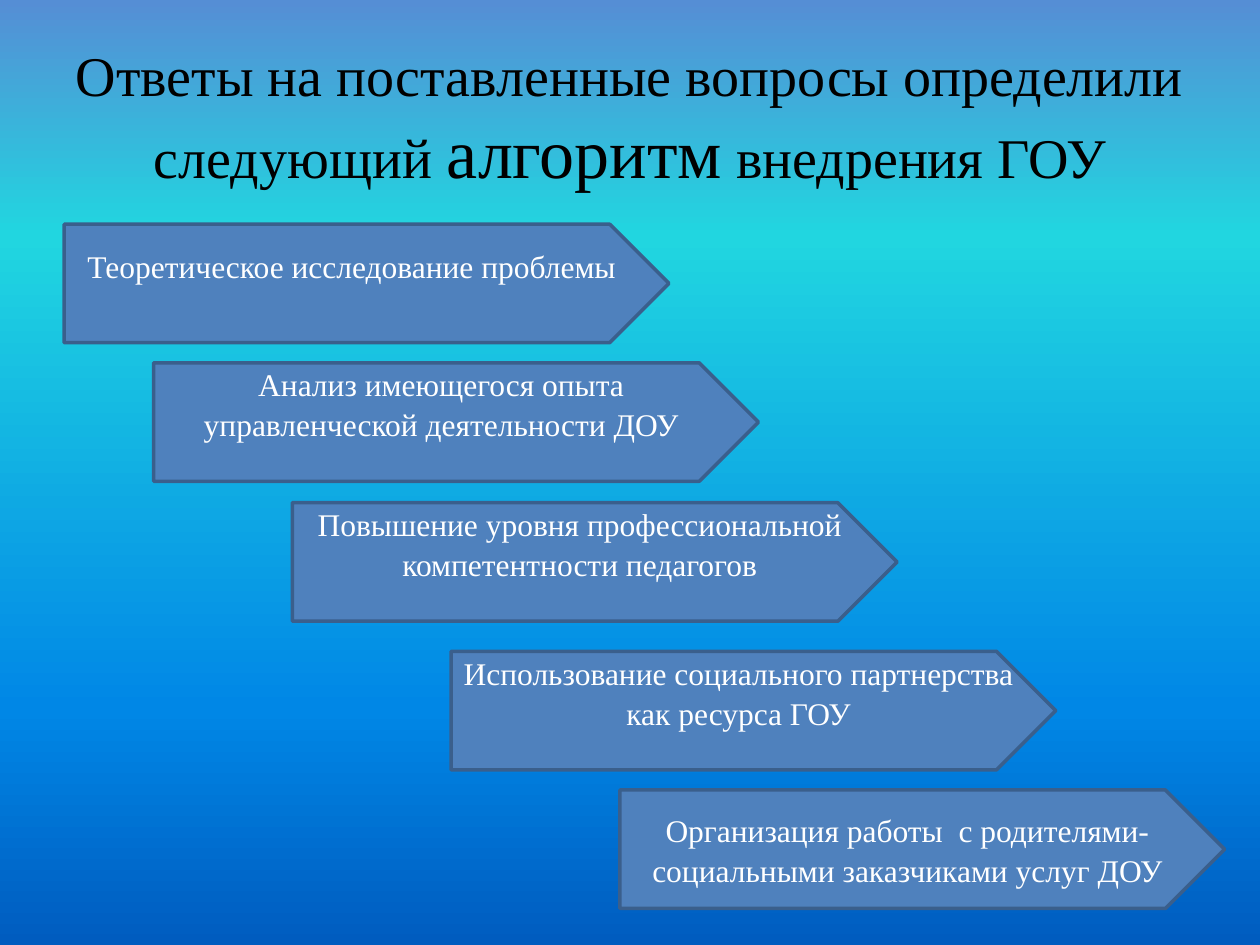
from dataclasses import dataclass

from lxml import etree
from pptx import Presentation
from pptx.dml.color import RGBColor
from pptx.enum.shapes import MSO_SHAPE
from pptx.enum.text import MSO_ANCHOR, MSO_AUTO_SIZE, PP_ALIGN
from pptx.oxml.ns import qn
from pptx.util import Inches, Pt

PENTAGON = MSO_SHAPE.PENTAGON
MIDDLE = MSO_ANCHOR.MIDDLE
CENTER = PP_ALIGN.CENTER
NO_AUTOFIT = MSO_AUTO_SIZE.NONE
TITLE_ONLY = 5


@dataclass(frozen=True)
class Theme:
    font: str = "Times New Roman"
    title_size: int = 32
    emphasis_size: int = 40
    step_size: int = 18
    title_color: str = "000000"
    step_color: str = "FFFFFF"
    step_fill: str = "4F81BD"
    step_line: str = "3A5F8C"
    step_line_width: int = 2
    background: tuple = ((0, "558ED5"), (25, "21D6E0"), (75, "0087E6"), (100, "005CBF"))


STEP_WIDTH, STEP_HEIGHT = 4.8, 0.94
MARGIN = 0.05
RAISED_MARGIN = 0.35  # lifts the text above the middle of its arrow

# left, top, bottom margin, wording
STEPS = (
    (0.51, 1.78, RAISED_MARGIN, "Теоретическое исследование проблемы"),
    (1.22, 2.88, RAISED_MARGIN, "Анализ имеющегося опыта управленческой деятельности ДОУ"),
    (2.32, 3.99, RAISED_MARGIN, "Повышение уровня профессиональной компетентности педагогов"),
    (3.58, 5.17, RAISED_MARGIN, "Использование социального партнерства как ресурса ГОУ"),
    (4.92, 6.27, MARGIN, "Организация работы  с родителями-социальными заказчиками услуг ДОУ"),
)


def add_text(paragraph, text, *, font, size, color):
    run = paragraph.add_run()
    run.text = text
    run.font.name = font
    run.font.size = Pt(size)
    run.font.color.rgb = RGBColor.from_string(color)


class SlideBuilder:
    def __init__(self, slide, theme):
        self.slide = slide
        self.theme = theme

    def background(self):
        fill = self.slide.background.fill
        fill.gradient()
        fill.gradient_angle = 270
        stops = self.slide.element.find(".//" + qn("a:gsLst"))
        for old_stop in list(stops):
            stops.remove(old_stop)
        for percent, color in self.theme.background:
            stop = etree.SubElement(stops, qn("a:gs"), pos=str(percent * 1000))
            etree.SubElement(stop, qn("a:srgbClr"), val=color)

    def title(self, parts):
        """Fill the title from (text, size) pairs."""
        title = self.slide.shapes.title
        title.left, title.top = Inches(0.5), Inches(0.3)
        title.width, title.height = Inches(9), Inches(1.25)
        frame = title.text_frame
        frame.word_wrap = True
        frame.auto_size = NO_AUTOFIT
        frame.vertical_anchor = MIDDLE
        paragraph = frame.paragraphs[0]
        paragraph.alignment = CENTER
        for text, size in parts:
            add_text(paragraph, text, font=self.theme.font, size=size,
                     color=self.theme.title_color)

    def step(self, left, top, bottom_margin, text):
        theme = self.theme
        arrow = self.slide.shapes.add_shape(
            PENTAGON, Inches(left), Inches(top), Inches(STEP_WIDTH), Inches(STEP_HEIGHT))
        arrow.shadow.inherit = False
        arrow.fill.solid()
        arrow.fill.fore_color.rgb = RGBColor.from_string(theme.step_fill)
        arrow.line.color.rgb = RGBColor.from_string(theme.step_line)
        arrow.line.width = Pt(theme.step_line_width)
        frame = arrow.text_frame
        frame.word_wrap = True
        frame.vertical_anchor = MIDDLE
        frame.margin_top = Inches(MARGIN)
        frame.margin_bottom = Inches(bottom_margin)
        paragraph = frame.paragraphs[0]
        paragraph.alignment = CENTER
        paragraph.line_spacing = 1.05
        add_text(paragraph, text, font=theme.font, size=theme.step_size,
                 color=theme.step_color)


def main():
    theme = Theme()
    presentation = Presentation()
    presentation.slide_width, presentation.slide_height = Inches(10), Inches(7.5)
    slide = presentation.slides.add_slide(presentation.slide_layouts[TITLE_ONLY])
    builder = SlideBuilder(slide, theme)
    builder.background()
    builder.title((
        ("Ответы на поставленные вопросы определили следующий ", theme.title_size),
        ("алгоритм", theme.emphasis_size),
        (" внедрения ГОУ", theme.title_size),
    ))
    for step in STEPS:
        builder.step(*step)
    presentation.save("out.pptx")


if __name__ == "__main__":
    main()
